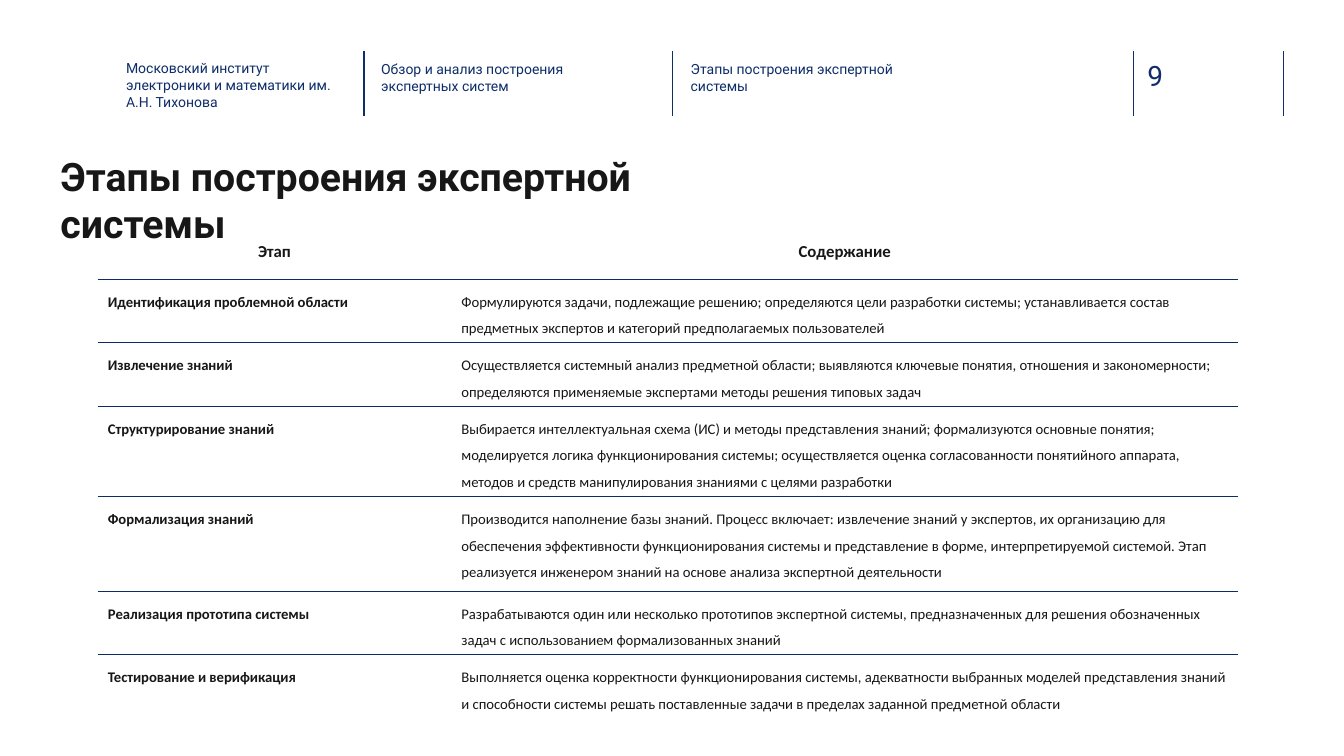
import pptx
import pptx.util
import pptx.dml.color
import pptx.enum.shapes
import pptx.enum.text
import pptx.oxml
import pptx.oxml.ns
from lxml import etree

RGBColor = pptx.dml.color.RGBColor
PP_ALIGN = pptx.enum.text.PP_ALIGN
ANCHOR = pptx.enum.text.MSO_ANCHOR

NAVY = RGBColor(0x10, 0x2D, 0x69)
HEADER_BLUE = RGBColor(0x0E, 0x2D, 0x69)
RULE_BLUE = RGBColor(0x0F, 0x2C, 0x68)
INK = RGBColor(0x18, 0x17, 0x17)
NO_GRID_STYLE = "{2D5ABB26-0587-4C30-8999-92F81FD0307C}"

# The slide is a grid of 100 columns by 100 rows
COL = pptx.util.Inches(13.33) / 100
ROW = pptx.util.Inches(7.5) / 100

HEADER_BOX = (9.38, 6.8, 86.12, 8.53)
TITLE_BOX = (3.75, 19.47, 54.09, 7.6)
TABLE_BOX = (7.28, 31.33, 84.85, 58.38)

HEADER_FONT = {"name": "Roboto", "size": 10, "bold": False, "color": HEADER_BLUE}
NUMBER_FONT = {"name": "Roboto", "size": 20, "bold": False, "color": NAVY}
TITLE_FONT = {"name": "Roboto", "size": 28, "bold": True, "color": INK}
HEAD_FONT = {"name": "Calibri", "size": 12, "bold": True, "color": INK}
STAGE_FONT = HEAD_FONT | {"size": 10.5}
CONTENT_FONT = STAGE_FONT | {"bold": False}

TITLE = "Этапы построения экспертной системы"
# Column offset, row offset, width, text
HEADER_TEXTS = [
    (0, 1.07, 15.6, "Московский институт электроники и математики им. А.Н. Тихонова"),
    (18.98, 1.2, 16.95, "Обзор и анализ построения экспертных систем"),
    (42.01, 1.2, 16.95, TITLE),
]
HEADER_RULES = [17.7, 40.66, 74.94, 86.12]

STAGES = [
    ("Этап", "Содержание"),
    ("Идентификация проблемной области",
     "Формулируются задачи, подлежащие решению; определяются цели разработки системы; "
     "устанавливается состав предметных экспертов и категорий предполагаемых пользователей"),
    ("Извлечение знаний",
     "Осуществляется системный анализ предметной области; выявляются ключевые понятия, "
     "отношения и закономерности; определяются применяемые экспертами методы решения типовых задач"),
    ("Структурирование знаний",
     "Выбирается интеллектуальная схема (ИС) и методы представления знаний; формализуются "
     "основные понятия; моделируется логика функционирования системы; осуществляется оценка "
     "согласованности понятийного аппарата, методов и средств манипулирования знаниями с целями разработки"),
    ("Формализация знаний",
     "Производится наполнение базы знаний. Процесс включает: извлечение знаний у экспертов, "
     "их организацию для обеспечения эффективности функционирования системы и представление "
     "в форме, интерпретируемой системой. Этап реализуется инженером знаний на основе анализа "
     "экспертной деятельности"),
    ("Реализация прототипа системы",
     "Разрабатываются один или несколько прототипов экспертной системы, предназначенных для "
     "решения обозначенных задач с использованием формализованных знаний"),
    ("Тестирование и верификация",
     "Выполняется оценка корректности функционирования системы, адекватности выбранных моделей "
     "представления знаний и способности системы решать поставленные задачи в пределах заданной "
     "предметной области"),
]
STAGE_SHARE = 0.31
ROW_HEIGHTS = [5.6, 6.93, 6.93, 9.73, 12.53, 6.93, 9.73]


def grid(x, y, w, h):
    return int(x * COL), int(y * ROW), int(w * COL), int(h * ROW)


def write(tf, text, font, align=PP_ALIGN.LEFT, spacing=1.0):
    p = tf.paragraphs[0]
    for name, value in {"alignment": align, "line_spacing": spacing,
                        "space_before": pptx.util.Pt(0)}.items():
        setattr(p, name, value)
    r = p.add_run()
    r.text = text
    for name, value in font.items():
        if name == "color":
            r.font.color.rgb = value
        else:
            setattr(r.font, name, pptx.util.Pt(value) if name == "size" else value)
    return p


def place(sp, box, inset=None):
    for name, value in zip(("left", "top", "width", "height"), grid(*box)):
        setattr(sp, name, value)
    tf = sp.text_frame
    frame = {"word_wrap": True, "vertical_anchor": ANCHOR.TOP,
             "auto_size": pptx.enum.text.MSO_AUTO_SIZE.NONE}
    if inset is not None:
        frame |= {f"margin_{side}": inset for side in ("left", "top", "right", "bottom")}
    for name, value in frame.items():
        setattr(tf, name, value)
    return tf


def add_header(slide, box, number):
    x, y, w, h = box
    *bodies, spare = [sp for sp in slide.placeholders if 1 <= sp.placeholder_format.idx <= 4]
    spare.element.getparent().remove(spare.element)
    # Captions
    for sp, (dx, dy, width, text) in zip(bodies, HEADER_TEXTS):
        tf = place(sp, (x + dx, y + dy, width, 6), inset=0)
        pPr = tf.paragraphs[0]._p.get_or_add_pPr()
        pPr.set("marL", "0")
        pPr.set("indent", "0")
        etree.SubElement(pPr, pptx.oxml.ns.qn("a:buNone"))
        write(tf, text, HEADER_FONT)
    # Slide number
    sp = slide.shapes.add_textbox(0, 0, 0, 0)
    write(place(sp, (x + 75.99, y + 0.93, 5.48, 4.53), inset=0), number, NUMBER_FONT)
    # Vertical rules
    for dx in HEADER_RULES:
        left, top, _, height = grid(x + dx, y, 0, h)
        rule = slide.shapes.add_connector(
            pptx.enum.shapes.MSO_CONNECTOR.STRAIGHT, left, top, left, top + height)
        rule.line.width = pptx.util.Pt(1)
        rule.line.color.rgb = NAVY
        etree.SubElement(rule.element.spPr, pptx.oxml.ns.qn("a:effectLst"))


def add_title(slide, box):
    write(place(slide.shapes.title, box), TITLE, TITLE_FONT)


def add_border(cell, tag):
    ns = pptx.oxml.ns.nsdecls("a")
    cell._tc.get_or_add_tcPr().append(pptx.oxml.parse_xml(
        f'<a:{tag} {ns} w="12700"><a:solidFill><a:srgbClr val="{RULE_BLUE}"/>'
        f'</a:solidFill></a:{tag}>'))


def add_stage_table(slide, box):
    table = slide.shapes.add_table(len(STAGES), 2, *grid(*box)).table
    table.first_row = table.horz_banding = False
    table._tbl.tblPr.find(pptx.oxml.ns.qn("a:tableStyleId")).text = NO_GRID_STYLE
    for column, share in zip(table.columns, (STAGE_SHARE, 1 - STAGE_SHARE)):
        column.width = int(box[2] * share * COL)
    for i, (texts, height) in enumerate(zip(STAGES, ROW_HEIGHTS)):
        table.rows[i].height = int(height * ROW)
        for j, text in enumerate(texts):
            cell = table.cell(i, j)
            if i > 0:
                add_border(cell, "lnT")
            if i < len(STAGES) - 1:
                add_border(cell, "lnB")
            cell.fill.background()
            if i == 0:
                write(cell.text_frame, text, HEAD_FONT, PP_ALIGN.CENTER)
            else:
                write(cell.text_frame, text, (STAGE_FONT, CONTENT_FONT)[j], spacing=1.5)


def main():
    prs = pptx.Presentation()
    prs.slide_width, prs.slide_height = int(COL * 100), int(ROW * 100)
    slide = prs.slides.add_slide(prs.slide_layouts.get_by_name("Comparison"))
    add_header(slide, HEADER_BOX, "9")
    add_title(slide, TITLE_BOX)
    add_stage_table(slide, TABLE_BOX)
    prs.save("out.pptx")


if __name__ == "__main__":
    main()
